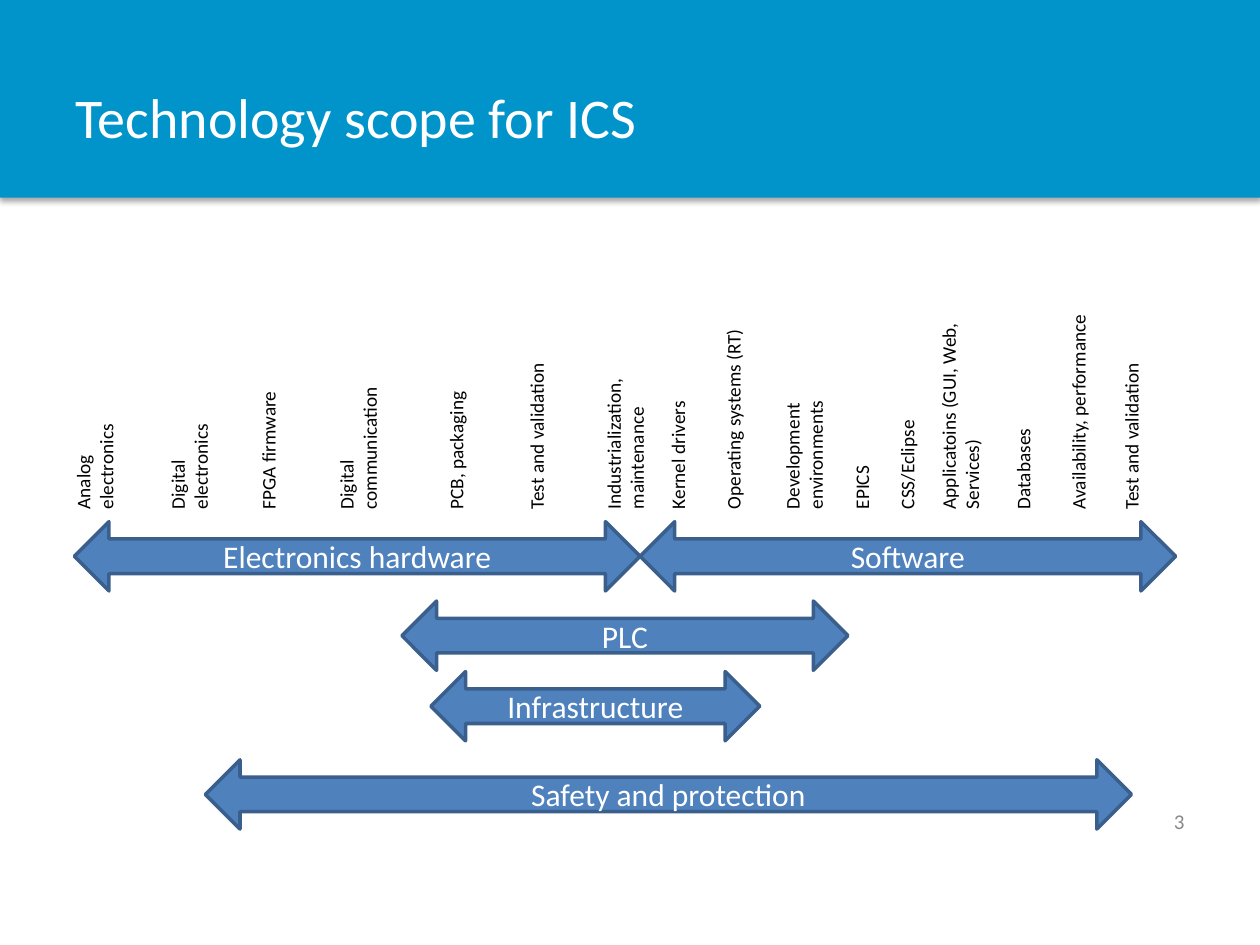
from lxml import etree
from pptx import Presentation
from pptx.dml.color import RGBColor
from pptx.enum.shapes import MSO_SHAPE
from pptx.enum.text import MSO_ANCHOR, MSO_AUTO_SIZE, PP_ALIGN
from pptx.oxml.ns import qn
from pptx.util import Emu, Pt

EMU_PER_PX = 9144  # 100 px to the inch
RECTANGLE = MSO_SHAPE.RECTANGLE
DOUBLE_ARROW = MSO_SHAPE.LEFT_RIGHT_ARROW
MIDDLE, TOP = MSO_ANCHOR.MIDDLE, MSO_ANCHOR.TOP
LEFT, CENTER, RIGHT = PP_ALIGN.LEFT, PP_ALIGN.CENTER, PP_ALIGN.RIGHT
FIT_SHAPE = MSO_AUTO_SIZE.SHAPE_TO_FIT_TEXT

WHITE = RGBColor(0xFF, 0xFF, 0xFF)
BLACK = RGBColor(0x00, 0x00, 0x00)
GRAY = RGBColor(0x89, 0x89, 0x89)
BANNER_BLUE = RGBColor(0x00, 0x94, 0xCA)
ARROW_BLUE = RGBColor(0x4F, 0x81, 0xBD)
ARROW_EDGE = RGBColor(0x3A, 0x5F, 0x8C)

ARROW_HEIGHT = 55
LABEL_BOTTOM = 414
LABEL_DEPTH = {1: 29, 2: 47}  # by number of text lines

# left, top, width, text
SCOPES = [
    (59, 414, 449, "Electronics hardware"),
    (508, 414, 425, "Software"),
    (319, 477, 354, "PLC"),
    (342, 533, 261, "Infrastructure"),
    (163, 603, 735, "Safety and protection"),
]

# centre x, length, text lines, text
TECHNOLOGIES = [
    (75, 126, 2, "Analog electronics"),
    (150, 126, 2, "Digital electronics"),
    (213, 126, 1, "FPGA firmware"),
    (284, 157, 2, "Digital communication"),
    (362, 157, 1, "PCB, packaging"),
    (426, 157, 1, "Test and validation"),
    (496, 189, 2, "Industrialization, maintenance"),
    (538, 189, 1, "Kernel drivers"),
    (582, 189, 1, "Operating systems (RT)"),
    (638, 189, 2, "Development environments"),
    (684, 189, 1, "EPICS"),
    (720, 189, 1, "CSS/Eclipse"),
    (762, 213, 2, "Applicatoins (GUI, Web, Services)"),
    (812, 213, 1, "Databases"),
    (856, 213, 1, "Availability, performance"),
    (898, 157, 1, "Test and validation"),
]


def px(*lengths):
    return [Emu(round(length * EMU_PER_PX)) for length in lengths]


class SlideBuilder:
    font = "Calibri"

    def __init__(self, slide):
        self.slide = slide

    def set_text(self, sp, text, size, color, align=LEFT, anchor=MIDDLE):
        tf = sp.text_frame
        tf.word_wrap = True
        tf.vertical_anchor = anchor
        p = tf.paragraphs[0]
        p.alignment = align
        r = p.add_run()
        r.text = text
        r.font.name = self.font
        r.font.size = Pt(size)
        r.font.color.rgb = color

    def text(self, left, top, width, height, text, size, color, **layout):
        sp = self.slide.shapes.add_textbox(*px(left, top, width, height))
        self.set_text(sp, text, size, color, **layout)
        return sp

    def shape(self, kind, left, top, width, height, fill):
        sp = self.slide.shapes.add_shape(kind, *px(left, top, width, height))
        sp.shadow.inherit = False
        sp.fill.solid()
        sp.fill.fore_color.rgb = fill
        return sp

    def banner(self, width, height):
        """Draw the title band with a soft shadow below it."""
        sp = self.shape(RECTANGLE, 0, 0, width, height, BANNER_BLUE)
        sp.line.fill.background()
        effects = sp._element.spPr.find(qn("a:effectLst"))
        shadow = etree.SubElement(
            effects, qn("a:outerShdw"), blurRad=str(Pt(3.1)), dist=str(Pt(1.8)),
            dir="5400000", rotWithShape="0")
        color = etree.SubElement(shadow, qn("a:srgbClr"), val=str(BLACK))
        etree.SubElement(color, qn("a:alpha"), val="35000")

    def arrow(self, left, top, width, text):
        sp = self.shape(DOUBLE_ARROW, left, top, width, ARROW_HEIGHT, ARROW_BLUE)
        sp.line.color.rgb = ARROW_EDGE
        sp.line.width = Pt(2)
        self.set_text(sp, text, 18, WHITE, CENTER)

    def upright_label(self, center, length, lines, text):
        """Add a label that reads upwards from LABEL_BOTTOM."""
        depth = LABEL_DEPTH[lines]
        middle = LABEL_BOTTOM - length / 2
        sp = self.text(center - length / 2, middle - depth / 2, length, depth,
                       text, 11, BLACK, anchor=TOP)
        sp.rotation = 270
        sp.text_frame.auto_size = FIT_SHAPE


def main():
    prs = Presentation()
    prs.slide_width, prs.slide_height = px(1000, 750)
    s = SlideBuilder(prs.slides.add_slide(prs.slide_layouts[6]))

    s.banner(1000, 157)
    s.text(50, 30, 781, 125, "Technology scope for ICS", 32, WHITE)
    s.text(717, 632, 233, 40, "3", 12, GRAY, align=RIGHT)
    for scope in SCOPES:
        s.arrow(*scope)
    for technology in TECHNOLOGIES:
        s.upright_label(*technology)

    prs.save("out.pptx")


if __name__ == "__main__":
    main()
